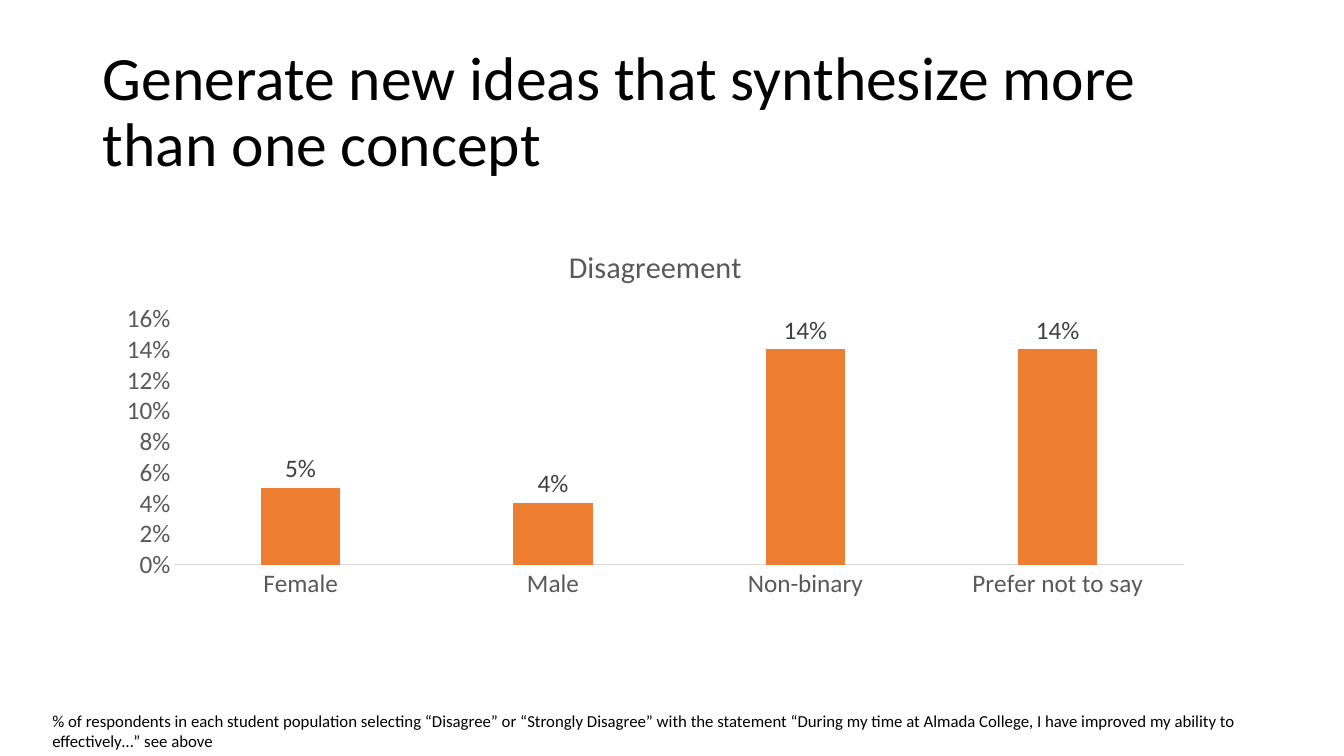
from pptx import Presentation
from pptx.chart.data import CategoryChartData
from pptx.dml.color import RGBColor
from pptx.enum.chart import XL_CHART_TYPE, XL_LABEL_POSITION, XL_TICK_MARK
from pptx.enum.text import MSO_ANCHOR, MSO_AUTO_SIZE, PP_ALIGN
from pptx.util import Pt

PX = 9144
FONT = "Calibri"
BLACK = RGBColor(0x00, 0x00, 0x00)
DARK = RGBColor(0x40, 0x40, 0x40)
GRAY = RGBColor(0x59, 0x59, 0x59)
RULE = RGBColor(0xD9, 0xD9, 0xD9)
ORANGE = RGBColor(0xED, 0x7D, 0x31)


def box(left, top, width, height):
    return left * PX, top * PX, width * PX, height * PX


def style(font, size, color):
    font.name = FONT
    font.size = Pt(size)
    font.bold = False
    font.color.rgb = color


prs = Presentation()
prs.slide_width = 1333 * PX
prs.slide_height = 750 * PX
s = prs.slides.add_slide(prs.slide_layouts[5])

title = s.shapes.title
title.left, title.top, title.width, title.height = box(92, 40, 1150, 145)
tf = title.text_frame
tf.text = "Generate new ideas that synthesize more than one concept"
tf.word_wrap = True
tf.auto_size = MSO_AUTO_SIZE.NONE
tf.vertical_anchor = MSO_ANCHOR.MIDDLE
p = tf.paragraphs[0]
p.alignment = PP_ALIGN.LEFT
p.line_spacing = 0.9
style(p.font, 44, BLACK)

note = s.shapes.add_textbox(*box(42, 700, 1249, 50))
tf = note.text_frame
tf.word_wrap = True
tf.auto_size = MSO_AUTO_SIZE.SHAPE_TO_FIT_TEXT
p = tf.paragraphs[0]
p.text = (
    "% of respondents in each student population selecting “Disagree” or "
    "“Strongly Disagree” with the statement “During my time at Almada College, "
    "I have improved my ability to effectively…” see above"
)
style(p.font, 12, BLACK)

data = CategoryChartData(number_format="0%")
data.categories = ["Female", "Male", "Non-binary", "Prefer not to say"]
data.add_series("Disagreement", [0.05, 0.04, 0.14, 0.14])
chart = s.shapes.add_chart(
    XL_CHART_TYPE.COLUMN_CLUSTERED, *box(104, 225, 1092, 377), data
).chart
style(chart.font, 18, BLACK)
chart.has_legend = False
chart.has_title = True
p = chart.chart_title.text_frame.paragraphs[0]
p.text = "Disagreement"
style(p.font, 21.6, GRAY)
chart.chart_title.include_in_layout = False

cat, val = chart.category_axis, chart.value_axis
for axis in (cat, val):
    axis.major_tick_mark = XL_TICK_MARK.NONE
    axis.minor_tick_mark = XL_TICK_MARK.NONE
    axis.has_major_gridlines = False
    style(axis.tick_labels.font, 18, GRAY)
cat.format.line.color.rgb = RULE
cat.format.line.width = Pt(0.75)
val.format.line.fill.background()
val.minimum_scale = 0
val.maximum_scale = 0.16
val.major_unit = 0.02
val.tick_labels.number_format = "0%"
val.tick_labels.number_format_is_linked = False

plot = chart.plots[0]
plot.gap_width = 219
plot.overlap = -27
plot.vary_by_categories = False
series = plot.series[0]
series.format.fill.solid()
series.format.fill.fore_color.rgb = ORANGE
labels = series.data_labels
labels.show_value = True
labels.position = XL_LABEL_POSITION.OUTSIDE_END
labels.number_format = "0%"
labels.number_format_is_linked = False
style(labels.font, 18, DARK)

prs.save("out.pptx")
